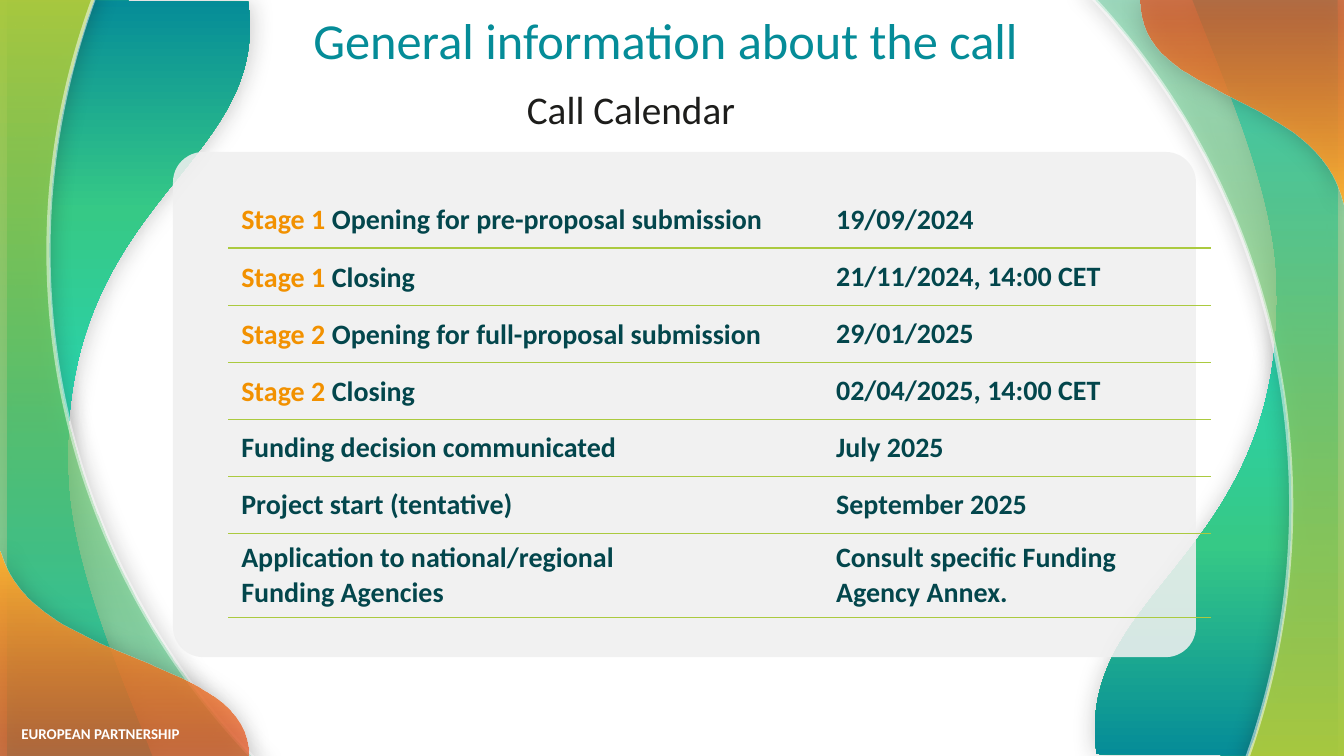
from dataclasses import dataclass

from pptx import Presentation
from pptx.dml.color import RGBColor
from pptx.enum.shapes import MSO_SHAPE as Preset
from pptx.enum.text import MSO_ANCHOR as Anchor
from pptx.oxml import parse_xml
from pptx.oxml.ns import nsdecls, qn
from pptx.util import Cm, Pt


@dataclass(frozen=True)
class Theme:
    font: str = "Calibri"
    title: float = 36
    subtitle: float = 28
    body: float = 20
    footer: float = 10.7
    teal: str = "058C98"
    dark_teal: str = "03464C"
    green: str = "36C986"
    black: str = "1D1D1B"
    orange: str = "F29100"
    lime: str = "ABCA3F"
    panel: str = "F0F0F0"
    white: str = "FFFFFF"


THEME = Theme()
WIDTH, HEIGHT = 33.87, 19.05
NO_GRID_STYLE = "{2D5ABB26-0587-4C30-8999-92F81FD0307C}"

# Ribbon outlines in centimetres: two numbers make a line, six a curve
TEAL_PATH = [(30.05, 0), (30.91, 2.16, 32.18, 4.98, 32.18, 7.29),
             (32.33, 14.1, 27.05, 14.86, 27.64, 19), (33.71, 19.05), (33.71, 0)]
GREEN_PATH = [(27.28, -0.33), (30.53, 3.02, 32.54, 7.65, 32.54, 12.73),
              (32.54, 14.99, 32.13, 17.22, 31.34, 19.35), (34.01, 19.35), (34.01, -0.33)]
ORANGE_PATH = [(33.86, 5.16), (33.86, 0), (28.75, 0), (28.7, 2.59, 33.2, 2.24, 33.86, 5.16)]

# Gradient stops: position, colour, opacity in percent
TEAL_STOPS = [(0, "10E4F7", 100), (72, THEME.green, 100), (100, THEME.teal, 100)]
RIGHT_GREEN_STOPS = [(0, "5ED49E", 50), (100, THEME.lime, 100)]
LEFT_GREEN_STOPS = [(0, THEME.green, 50), (100, THEME.lime, 100)]
ORANGE_STOPS = [(0, "E84E1B", 70), (100, "F8B133", 100)]

CALENDAR = [
    ("Stage 1 ", ["Opening for pre-proposal submission"], "19/09/2024"),
    ("Stage 1 ", ["Closing"], "21/11/2024, 14:00 CET"),
    ("Stage 2 ", ["Opening for full-proposal submission"], "29/01/2025"),
    ("Stage 2 ", ["Closing"], "02/04/2025, 14:00 CET"),
    ("", ["Funding decision communicated"], "July 2025"),
    ("", ["Project start (tentative)"], "September 2025"),
    ("", ["Application to national/regional", "Funding Agencies"],
     "Consult specific Funding Agency Annex."),
]


def color_xml(color, opacity):
    return f'<a:srgbClr val="{color}"><a:alpha val="{opacity * 1000}"/></a:srgbClr>'


def set_opacity(element, opacity):
    color = next(element.iter(qn("a:srgbClr")))
    color.append(parse_xml(f'<a:alpha {nsdecls("a")} val="{opacity * 1000}"/>'))


def add_outline(slide, path):
    """Build a closed outline, then bend its six-number segments into curves."""
    ends = [(Cm(segment[-2]), Cm(segment[-1])) for segment in path]
    builder = slide.shapes.build_freeform(*ends[0])
    builder.add_line_segments(ends[1:], close=True)
    shape = builder.convert_to_shape()
    lines = list(shape._element.iter(qn("a:lnTo")))
    for line, segment in zip(lines, path[1:]):
        if len(segment) == 6:
            points = "".join(f'<a:pt x="{Cm(x) - shape.left}" y="{Cm(y) - shape.top}"/>'
                             for x, y in zip(segment[::2], segment[1::2]))
            curve = parse_xml(f'<a:cubicBezTo {nsdecls("a")}>{points}</a:cubicBezTo>')
            line.getparent().replace(line, curve)
    return shape


def add_ribbon(slide, path, stops, shadow_opacity, edged):
    shape = add_outline(slide, path)
    shape.shadow.inherit = False
    shape.fill.background()
    if edged:
        shape.line.color.rgb = RGBColor.from_string(THEME.white)
        shape.line.width = Pt(3)
        set_opacity(shape.line.fill._xPr, 50)
    else:
        shape.line.fill.background()
    # Gradient and soft shadow
    properties = shape._element.spPr
    stop_xml = "".join(f'<a:gs pos="{position * 1000}">{color_xml(color, opacity)}</a:gs>'
                       for position, color, opacity in stops)
    gradient = parse_xml(f'<a:gradFill {nsdecls("a")} rotWithShape="1"><a:gsLst>{stop_xml}</a:gsLst>'
                         '<a:lin ang="5400000" scaled="0"/></a:gradFill>')
    properties.replace(properties.find(qn("a:noFill")), gradient)
    properties.find(qn("a:effectLst")).append(parse_xml(
        f'<a:outerShdw {nsdecls("a")} blurRad="{Pt(16.9)}" dist="0" dir="0" algn="ctr" '
        f'rotWithShape="0">{color_xml(THEME.black, shadow_opacity)}</a:outerShdw>'))
    return shape


def add_ribbons(slide):
    # Path, right stops, left stops, shadow opacity, edged, left position, left width
    ribbons = [
        (TEAL_PATH, TEAL_STOPS, TEAL_STOPS, 25, False, 0.18, 6.07),
        (GREEN_PATH, RIGHT_GREEN_STOPS, LEFT_GREEN_STOPS, 35, True, -0.3, 6.96),
        (ORANGE_PATH, ORANGE_STOPS, ORANGE_STOPS, 30, False, 0, 6.27),
    ]
    for path, stops, _, shadow, edged, _, _ in ribbons:
        add_ribbon(slide, path, stops, shadow, edged)
    # The left side is the right side turned half round
    for path, _, stops, shadow, edged, left, width in ribbons:
        shape = add_ribbon(slide, path, stops, shadow, edged)
        shape.left, shape.width = Cm(left), Cm(width)
        shape.top = Cm(HEIGHT) - shape.top - shape.height
        shape.rotation = 180


def add_run(paragraph, text, size, color, bold=False):
    run = paragraph.add_run()
    run.text = text
    font = run.font
    font.name, font.size, font.bold = THEME.font, Pt(size), bold
    font.color.rgb = RGBColor.from_string(color)


def set_margins(target, horizontal, vertical):
    target.margin_left = target.margin_right = Cm(horizontal)
    target.margin_top = target.margin_bottom = Cm(vertical)


def add_text(slide, box, text, size, color, bold=False, anchor=Anchor.TOP,
             margins=(0, 0), spacing=None, wrap=True):
    frame = slide.shapes.add_textbox(*map(Cm, box)).text_frame
    frame.word_wrap = wrap
    frame.vertical_anchor = anchor
    set_margins(frame, *margins)
    paragraph = frame.paragraphs[0]
    paragraph.line_spacing = spacing
    add_run(paragraph, text, size, color, bold)


def add_panel(slide):
    panel = slide.shapes.add_shape(Preset.ROUNDED_RECTANGLE, Cm(4.36), Cm(3.83), Cm(25.78), Cm(12.73))
    panel.adjustments[0] = 0.06
    panel.shadow.inherit = False
    panel.line.fill.background()
    panel.fill.solid()
    panel.fill.fore_color.rgb = RGBColor.from_string(THEME.panel)
    set_opacity(panel._element.spPr, 88)


def fill_cell(cell, stage, lines, borders):
    cell.fill.background()
    cell.vertical_anchor = Anchor.MIDDLE
    set_margins(cell, 0.33, 0.18)
    frame = cell.text_frame
    for index, line in enumerate(lines):
        paragraph = frame.add_paragraph() if index else frame.paragraphs[0]
        if stage:
            paragraph.line_spacing = 1.05
            paragraph.space_after = Pt(6)
            add_run(paragraph, stage, THEME.body, THEME.orange, True)
        add_run(paragraph, line, THEME.body, THEME.dark_teal, True)
    for position, border in enumerate(borders):
        cell._tc.get_or_add_tcPr().insert(position, parse_xml(
            f'<a:{border} {nsdecls("a")} w="{Pt(1)}"><a:solidFill><a:srgbClr val="{THEME.lime}"/>'
            f'</a:solidFill></a:{border}>'))


def add_calendar(slide):
    row_heights = [1.44] * (len(CALENDAR) - 1) + [2.1]
    table = slide.shapes.add_table(len(CALENDAR), 2, Cm(5.75), Cm(4.81),
                                   Cm(24.77), Cm(sum(row_heights))).table
    table.first_row = table.horz_banding = False
    table._tbl.tblPr.find(qn("a:tableStyleId")).text = NO_GRID_STYLE
    for column, width in zip(table.columns, (14.99, 9.78)):
        column.width = Cm(width)
    for index, (stage, event, date) in enumerate(CALENDAR):
        table.rows[index].height = Cm(row_heights[index])
        borders = ["lnT", "lnB"] if index else ["lnB"]
        fill_cell(table.cell(index, 0), stage, event, borders)
        fill_cell(table.cell(index, 1), "", [date], borders)


def main():
    presentation = Presentation()
    presentation.slide_width, presentation.slide_height = Cm(WIDTH), Cm(HEIGHT)
    slide = presentation.slides.add_slide(presentation.slide_layouts[6])

    # Frame and footer
    add_ribbons(slide)
    add_text(slide, (0.21, 18.08, 4.75, 0.79), "EUROPEAN PARTNERSHIP", THEME.footer, THEME.white,
             bold=True, anchor=Anchor.MIDDLE, margins=(0.33, 0.18), wrap=False)

    # Headings and calendar
    add_panel(slide)
    add_text(slide, (7.9, 0.37, 21.18, 1.4), "General information about the call",
             THEME.title, THEME.teal, anchor=Anchor.BOTTOM, spacing=0.9)
    add_text(slide, (12.8, 2.08, 20.9, 0.64), "Call Calendar",
             THEME.subtitle, THEME.black, margins=(0.48, 0), spacing=1.05)
    add_calendar(slide)

    presentation.save("out.pptx")


if __name__ == "__main__":
    main()
